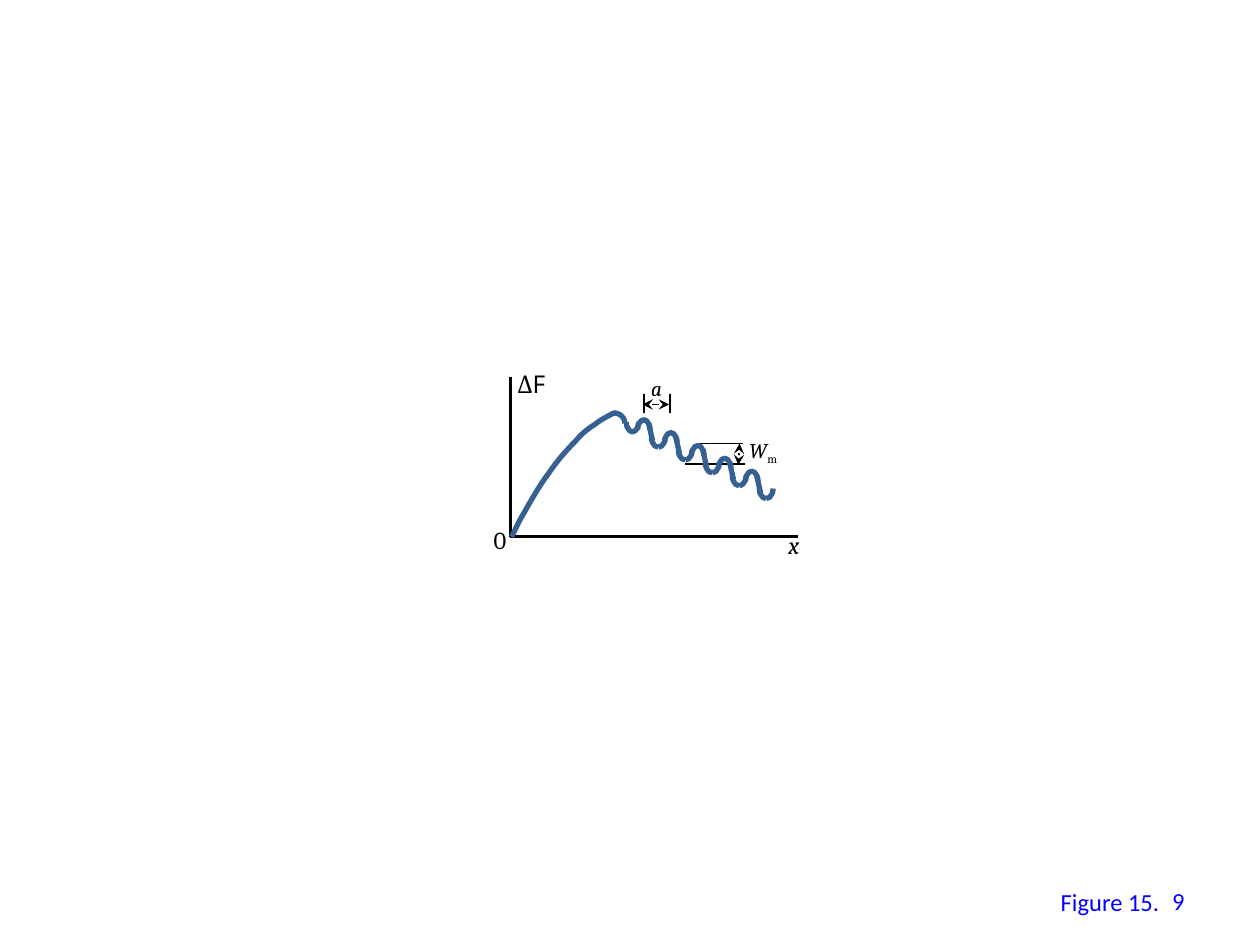
"""Build a slide with a free energy curve whose falling side is a row of ripples."""
from lxml import etree
from pptx import Presentation
from pptx.dml.color import RGBColor
from pptx.enum.shapes import MSO_CONNECTOR, MSO_SHAPE
from pptx.enum.text import MSO_ANCHOR, MSO_AUTO_SIZE, PP_ALIGN
from pptx.oxml.ns import qn
from pptx.util import Inches, Pt

STRAIGHT = MSO_CONNECTOR.STRAIGHT
ARC = MSO_SHAPE.ARC
FIT_SHAPE = MSO_AUTO_SIZE.SHAPE_TO_FIT_TEXT
NO_FIT = MSO_AUTO_SIZE.NONE
TOP, MIDDLE = MSO_ANCHOR.TOP, MSO_ANCHOR.MIDDLE
LEFT, RIGHT = PP_ALIGN.LEFT, PP_ALIGN.RIGHT

COLORS = {"ink": "000000", "curve": "376092", "caption": "0000FF"}
CURVE_WIDTH = 3

CAPTION = ((8.32, 6.99, 0.99, 0.34), [("Figure 15.", {})])
SLIDE_NUMBER = ((7.17, 6.95, 2.33, 0.4), [("9", {})])
AXIS_LABELS = [
    ((6.16, 4.16, 0.34, 0.34), [("x", {"italic": True})]),
    ((4.01, 2.88, 0.54, 0.34), [("Δ", {}), ("F", {"font": "Noto Sans"})]),
    ((3.82, 4.12, 0.3, 0.34), [("0", {})]),
]
MEASURE_LABELS = [
    ((5.85, 3.42, 0.47, 0.3), [("W", {"italic": True}), ("m", {"subscript": True})]),
    ((5.07, 2.93, 0.33, 0.3), [("a", {"italic": True})]),
]
AXES = [((6.33, 4.26), (4.05, 4.26)), ((4.05, 2.99), (4.05, 4.26))]
GUIDES = [
    ((5.55, 3.52), (5.9, 3.52)),
    ((5.44, 3.68), (5.91, 3.68)),
    ((5.11, 3.28), (5.11, 3.13)),
    ((5.32, 3.28), (5.32, 3.13)),
]
MEASURES = [((5.86, 3.69), (5.87, 3.52)), ((5.31, 3.21), (5.1, 3.21))]

RISE_START = (4.06, 4.26)
RISE_CURVES = [
    ((4.09, 4.21), (4.11, 4.15), (4.16, 4.07)),
    ((4.21, 3.98), (4.29, 3.84), (4.36, 3.75)),
    ((4.42, 3.66), (4.5, 3.57), (4.56, 3.51)),
    ((4.62, 3.44), (4.67, 3.4), (4.72, 3.37)),
    ((4.77, 3.33), (4.83, 3.3), (4.85, 3.29)),
    ((4.88, 3.27), (4.89, 3.28), (4.89, 3.28)),
]
CURVE_STEPS = 12

PEAK_ARCS = [
    ((4.8, 3.28, 0.16, 0.16), ""),
    ((4.96, 3.27, 0.11, 0.16), "V"),
    ((4.97, 3.27, 0.11, 0.16), "HV"),
]
RIPPLE_COUNT = 6
RIPPLE_FIRST = (5.05, 3.33)
RIPPLE_LAST = (6.12, 3.84)
RIPPLE_ARCS = [((0, 0), ""), ((0.01, 0), "H"), ((0.12, 0.06), "V"), ((0.12, 0.06), "HV")]
RIPPLE_SLOPE = ((0.13, 0.17), (0.1, 0.04))
ARC_SIZE = (0.11, 0.16)


def add_text(slide, box, runs, size=14, color="ink", font="Cambria",
             align=LEFT, anchor=TOP, wrap=False):
    shape = slide.shapes.add_textbox(*map(Inches, box))
    frame = shape.text_frame
    frame.word_wrap = wrap
    frame.auto_size = NO_FIT if wrap else FIT_SHAPE
    frame.vertical_anchor = anchor
    paragraph = frame.paragraphs[0]
    paragraph.alignment = align
    for text, style in runs:
        run = paragraph.add_run()
        run.text = text
        run.font.size = Pt(size)
        run.font.name = style.get("font", font)
        run.font.italic = style.get("italic", False)
        run.font.color.rgb = RGBColor.from_string(COLORS[color])
        if style.get("subscript"):
            run.font._element.set("baseline", "-25000")


def format_line(shape, color, width):
    shape.line.color.rgb = RGBColor.from_string(COLORS[color])
    shape.line.width = Pt(width)


def add_line(slide, start, end, color="ink", width=1, arrows=False):
    points = map(Inches, (*start, *end))
    connector = slide.shapes.add_connector(STRAIGHT, *points)
    format_line(connector, color, width)
    properties = connector._element.spPr
    if arrows:
        outline = properties.find(qn("a:ln"))
        for tag in ("a:headEnd", "a:tailEnd"):
            etree.SubElement(outline, qn(tag), type="stealth")
    etree.SubElement(properties, qn("a:effectLst"))


def add_arc(slide, box, flips):
    shape = slide.shapes.add_shape(ARC, *map(Inches, box))
    shape.shadow.inherit = False
    shape.fill.background()
    format_line(shape, "curve", CURVE_WIDTH)
    for flip in flips:
        shape._element.spPr.find(qn("a:xfrm")).set("flip" + flip, "1")


def bezier_point(points, t):
    weights = ((1 - t) ** 3, 3 * t * (1 - t) ** 2, 3 * t ** 2 * (1 - t), t ** 3)
    return tuple(
        Inches(sum(weight * value for weight, value in zip(weights, values)))
        for values in zip(*points)
    )


def add_rise(slide):
    points = []
    start = RISE_START
    for curve in RISE_CURVES:
        points += [bezier_point((start, *curve), step / CURVE_STEPS)
                   for step in range(1, CURVE_STEPS + 1)]
        start = curve[-1]
    builder = slide.shapes.build_freeform(*map(Inches, RISE_START))
    builder.add_line_segments(points, close=False)
    shape = builder.convert_to_shape()
    shape.shadow.inherit = False
    shape.fill.background()
    format_line(shape, "curve", CURVE_WIDTH)


def add_ripples(slide):
    for index in range(RIPPLE_COUNT - 1):
        left, top = (first + (last - first) * index / (RIPPLE_COUNT - 1)
                     for first, last in zip(RIPPLE_FIRST, RIPPLE_LAST))
        for (across, down), flips in RIPPLE_ARCS:
            add_arc(slide, (left + across, top + down, *ARC_SIZE), flips)
        start, end = ((left + across, top + down) for across, down in RIPPLE_SLOPE)
        add_line(slide, start, end, color="curve", width=CURVE_WIDTH)


def main():
    presentation = Presentation()
    presentation.slide_width = Inches(10)
    presentation.slide_height = Inches(7.5)
    slide = presentation.slides.add_slide(presentation.slide_layouts[6])

    add_text(slide, *CAPTION, color="caption", font="Calibri")
    for start, end in GUIDES:
        add_line(slide, start, end)
    for start, end in AXES:
        add_line(slide, start, end, width=1.5)
    for box, runs in AXIS_LABELS:
        add_text(slide, box, runs)
    add_rise(slide)
    for box, flips in PEAK_ARCS:
        add_arc(slide, box, flips)
    add_ripples(slide)
    for start, end in MEASURES:
        add_line(slide, start, end, arrows=True)
    for box, runs in MEASURE_LABELS:
        add_text(slide, box, runs, size=12)
    add_text(slide, *SLIDE_NUMBER, color="caption", font="Calibri",
             align=RIGHT, anchor=MIDDLE, wrap=True)
    presentation.save("out.pptx")


if __name__ == "__main__":
    main()
